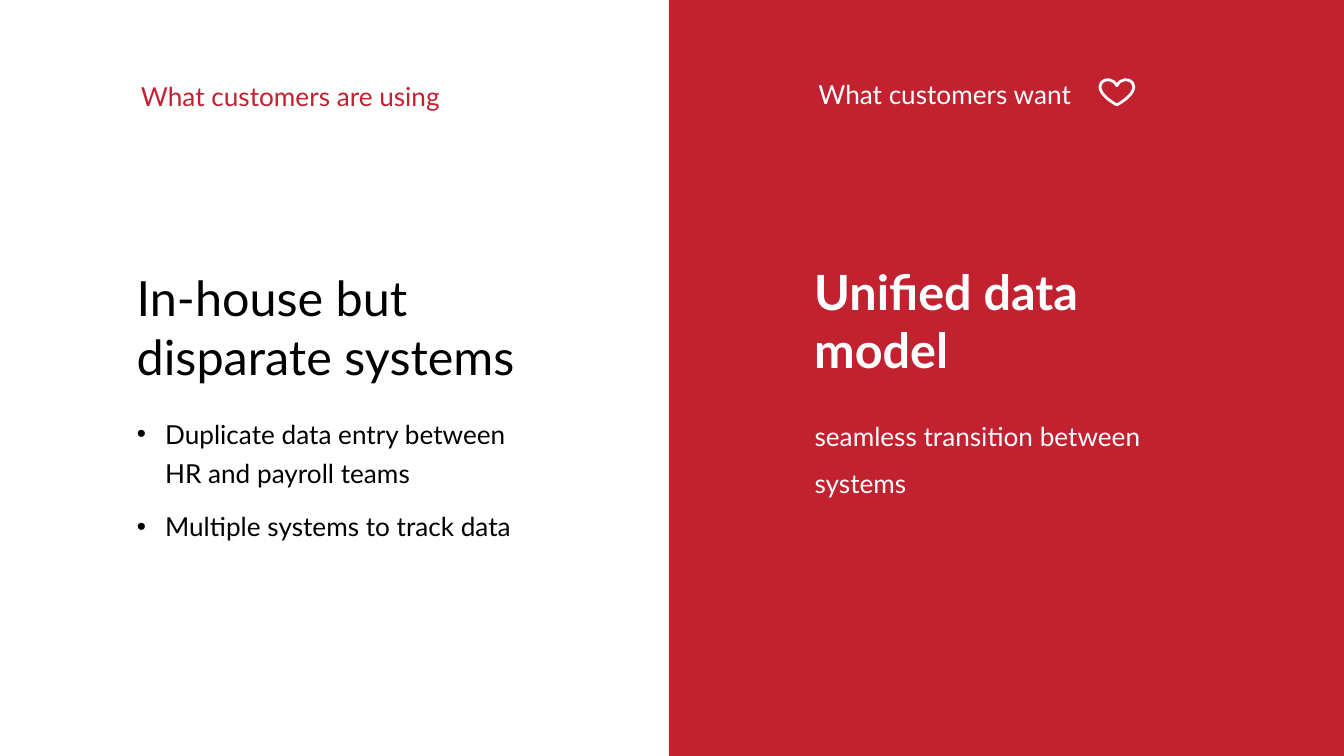
"""Build a two-panel slide that contrasts what customers use with what they want."""
from dataclasses import dataclass

import pptx
import pptx.dml.color
import pptx.enum.shapes
import pptx.enum.text
import pptx.oxml
import pptx.oxml.ns
import pptx.util

SLIDE_WIDTH = pptx.util.Inches(10)
SLIDE_HEIGHT = round(SLIDE_WIDTH * 9 / 16)
FONT = "Lato"
RED, WHITE, BLACK = "C2212F", "FFFFFF", "000000"
CAPTION_SIZE, HEADING_SIZE = 14, 26


@dataclass(frozen=True)
class Area:
    """A rectangle in percent of the slide's width and height."""

    left: float
    top: float
    width: float
    height: float


@dataclass(frozen=True)
class TextBlock:
    """A run of paragraphs sharing one format."""

    area: Area
    lines: tuple[str, ...]
    color: str
    size: float = CAPTION_SIZE
    bold: bool = False
    line_spacing: float = 1.0
    bulleted: bool = False
    is_title: bool = False


BLOCKS = (
    TextBlock(Area(9.5, 9.78, 31.9, 6.23), ("What customers are using",), RED),
    TextBlock(Area(9.17, 34.62, 35.1, 17.97), ("In-house but disparate systems",), BLACK,
              size=HEADING_SIZE, is_title=True),
    TextBlock(Area(9.2, 53.38, 32.2, 27.94),
              ("Duplicate data entry between HR and payroll teams",
               "Multiple systems to track data"),
              BLACK, line_spacing=1.25, bulleted=True),
    TextBlock(Area(59.9, 9.47, 30, 7.12), ("What customers want",), WHITE),
    TextBlock(Area(59.6, 33.78, 30.3, 18.86), ("Unified data model",), WHITE,
              size=HEADING_SIZE, bold=True),
    TextBlock(Area(59.63, 52.62, 30.6, 17.08), ("seamless transition between systems",), WHITE,
              line_spacing=1.5),
)
WANT_PANEL = Area(49.77, 0, 50.23, 100)
HEART = Area(81.85, 10.5, 2.5, 3.38)


def rgb(color: str) -> pptx.dml.color.RGBColor:
    """Turn a hex string into a colour."""
    return pptx.dml.color.RGBColor.from_string(color)


def place(area: Area) -> tuple[int, int, int, int]:
    """Turn percentages into left, top, width and height on the slide."""
    return (
        round(SLIDE_WIDTH * area.left / 100),
        round(SLIDE_HEIGHT * area.top / 100),
        round(SLIDE_WIDTH * area.width / 100),
        round(SLIDE_HEIGHT * area.height / 100),
    )


def add_bullet(paragraph) -> None:
    """Give a paragraph a hanging bullet in black."""
    paragraph.space_before = pptx.util.Pt(7.5)
    properties = paragraph._p.get_or_add_pPr()
    indent = pptx.util.Inches(0.21)
    properties.set("marL", str(indent))
    properties.set("indent", str(-indent))
    namespace = pptx.oxml.ns.nsdecls("a")
    for xml in (
        f'<a:buClr {namespace}><a:srgbClr val="{BLACK}"/></a:buClr>',
        f'<a:buFont {namespace} typeface="Arial"/>',
        f'<a:buChar {namespace} char="•"/>',
    ):
        properties.append(pptx.oxml.parse_xml(xml))


def draw_text(slide, block: TextBlock) -> None:
    """Write a block into the title placeholder or a new text box."""
    if block.is_title:
        shape = slide.shapes.title
        shape.left, shape.top, shape.width, shape.height = place(block.area)
    else:
        shape = slide.shapes.add_textbox(*place(block.area))
    text_frame = shape.text_frame
    text_frame.word_wrap = True
    text_frame.auto_size = pptx.enum.text.MSO_AUTO_SIZE.NONE
    text_frame.vertical_anchor = pptx.enum.text.MSO_ANCHOR.TOP
    text_frame.text = "\n".join(block.lines)
    for paragraph in text_frame.paragraphs:
        paragraph.alignment = pptx.enum.text.PP_ALIGN.LEFT
        paragraph.line_spacing = block.line_spacing
        if block.bulleted:
            add_bullet(paragraph)
        for run in paragraph.runs:
            run.font.name = FONT
            run.font.size = pptx.util.Pt(block.size)
            run.font.bold = block.bold
            run.font.color.rgb = rgb(block.color)


def draw_panel(slide, area: Area, color: str) -> None:
    """Draw a filled rectangle without an outline."""
    panel = slide.shapes.add_shape(pptx.enum.shapes.MSO_SHAPE.RECTANGLE, *place(area))
    panel.shadow.inherit = False
    panel.fill.solid()
    panel.fill.fore_color.rgb = rgb(color)
    panel.line.fill.background()


def draw_heart(slide, area: Area, color: str) -> None:
    """Draw an outlined heart."""
    heart = slide.shapes.add_shape(pptx.enum.shapes.MSO_SHAPE.HEART, *place(area))
    heart.shadow.inherit = False
    heart.fill.background()
    heart.line.color.rgb = rgb(color)
    heart.line.width = pptx.util.Pt(1.5)


def main() -> None:
    """Build and save the slide."""
    presentation = pptx.Presentation()
    presentation.slide_width = SLIDE_WIDTH
    presentation.slide_height = SLIDE_HEIGHT
    slide = presentation.slides.add_slide(presentation.slide_layouts.get_by_name("Title Only"))
    draw_panel(slide, WANT_PANEL, RED)
    for block in BLOCKS:
        draw_text(slide, block)
    draw_heart(slide, HEART, WHITE)
    presentation.save("out.pptx")


if __name__ == "__main__":
    main()
